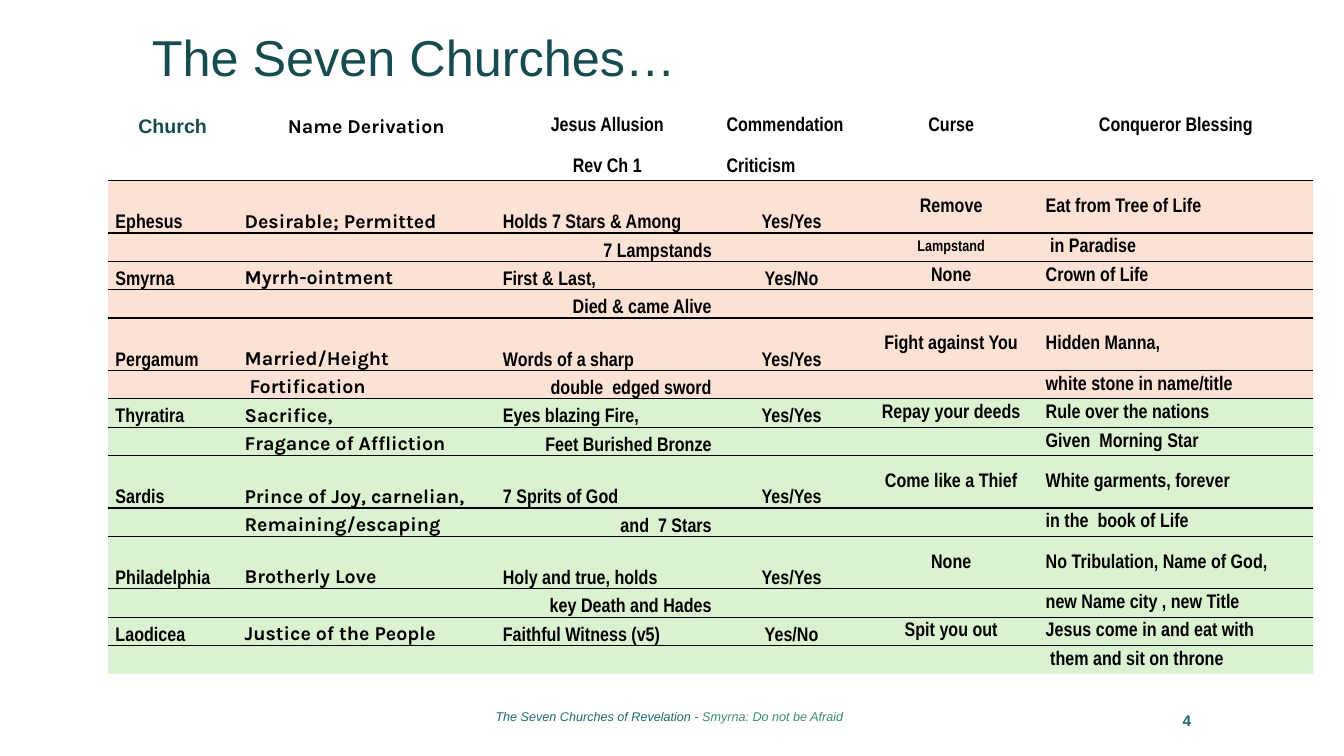
from dataclasses import dataclass
from typing import Any

import pptx
import pptx.dml.color
import pptx.enum.text
import pptx.oxml
import pptx.oxml.ns
import pptx.util

RGBColor = pptx.dml.color.RGBColor
ALIGN = pptx.enum.text.PP_ALIGN
ANCHOR = pptx.enum.text.MSO_ANCHOR

PX = 9525  # EMU per px, 96 px to the inch
TEAL_DARK = RGBColor(0x16, 0x4B, 0x4F)
TEAL = RGBColor(0x1F, 0x69, 0x6F)
GREEN = RGBColor(0x38, 0x90, 0x66)
BLACK = RGBColor(0, 0, 0)
PEACH = RGBColor(0xFB, 0xE2, 0xD5)
MINT = RGBColor(0xDA, 0xF2, 0xD0)

NO_STYLE = "{2D5ABB26-0587-4C30-8999-92F81FD0307C}"
TALL, SHORT = 50, 27


@dataclass
class Column:
    width: int
    font: str
    header: tuple[str, str]
    header_align: Any
    aligns: tuple[Any, Any]
    anchor: Any


@dataclass
class Church:
    first: tuple[str, ...]
    second: tuple[str, ...]
    fill: RGBColor
    height: int


NARROW, KARLA = "Arial Narrow", "Karla"
LEFT, CENTER, RIGHT = ALIGN.LEFT, ALIGN.CENTER, ALIGN.RIGHT
BOTTOM, MIDDLE = ANCHOR.BOTTOM, ANCHOR.MIDDLE

COLUMNS = [
    Column(123, NARROW, ("Church", ""), CENTER, (LEFT, LEFT), BOTTOM),
    Column(246, KARLA, ("Name Derivation", ""), CENTER, (LEFT, LEFT), BOTTOM),
    Column(213, NARROW, ("Jesus Allusion", "Rev Ch 1"), CENTER, (LEFT, RIGHT), BOTTOM),
    Column(138, NARROW, ("Commendation", "Criticism"), LEFT, (CENTER, CENTER), BOTTOM),
    Column(166, NARROW, ("Curse", ""), CENTER, (CENTER, CENTER), MIDDLE),
    Column(262, NARROW, ("Conqueror Blessing", ""), CENTER, (LEFT, LEFT), MIDDLE),
]

CHURCHES = [
    Church(("Ephesus", "Desirable; Permitted", "Holds 7 Stars & Among", "Yes/Yes",
            "Remove", "Eat from Tree of Life"),
           ("", "", "7 Lampstands", "", "Lampstand", " in Paradise"), PEACH, TALL),
    Church(("Smyrna", "Myrrh-ointment", "First & Last,", "Yes/No", "None", "Crown of Life"),
           ("", "", "Died & came Alive", "", "", ""), PEACH, SHORT),
    Church(("Pergamum", "Married/Height", "Words of a sharp", "Yes/Yes",
            "Fight against You", "Hidden Manna,"),
           ("", " Fortification", "double  edged sword", "", "",
            "white stone in name/title"), PEACH, TALL),
    Church(("Thyratira", "Sacrifice,", "Eyes blazing Fire,", "Yes/Yes",
            "Repay your deeds", "Rule over the nations"),
           ("", "Fragance of Affliction", "Feet Burished Bronze", "", "",
            "Given  Morning Star"), MINT, SHORT),
    Church(("Sardis", "Prince of Joy, carnelian,", "7 Sprits of God", "Yes/Yes",
            "Come like a Thief", "White garments, forever"),
           ("", "Remaining/escaping", "and  7 Stars", "", "",
            "in the  book of Life"), MINT, TALL),
    Church(("Philadelphia", "Brotherly Love", "Holy and true, holds", "Yes/Yes",
            "None", "No Tribulation, Name of God,"),
           ("", "", "key Death and Hades", "", "", "new Name city , new Title"), MINT, TALL),
    Church(("Laodicea", "Justice of the People", "Faithful Witness (v5)", "Yes/No",
            "Spit you out", "Jesus come in and eat with"),
           ("", "", "", "", "", " them and sit on throne"), MINT, SHORT),
]


def set_all(target: Any, values: dict[str, Any]) -> None:
    for name, value in values.items():
        setattr(target, name, value)


def add_run(p: Any, text: str, font: str, size: int, color: RGBColor, **style: bool) -> None:
    r = p.add_run()
    r.text = text
    set_all(r.font, {"name": font, "size": pptx.util.Pt(size), **style})
    r.font.color.rgb = color


def place(sp: Any, left: int, top: int, width: int, height: int) -> None:
    set_all(sp, {"left": left * PX, "top": top * PX,
                 "width": width * PX, "height": height * PX})


def add_box(s: Any, left: int, top: int, width: int, height: int, align: Any) -> Any:
    sp = s.shapes.add_textbox(0, 0, 0, 0)
    place(sp, left, top, width, height)
    set_all(sp.text_frame, {"word_wrap": True, "vertical_anchor": MIDDLE})
    p = sp.text_frame.paragraphs[0]
    p.alignment = align
    return p


def add_border(cell: Any, side: str) -> None:
    line = pptx.oxml.parse_xml(
        f'<a:{side} {pptx.oxml.ns.nsdecls("a")} w="12700"><a:solidFill>'
        f'<a:srgbClr val="{BLACK}"/></a:solidFill></a:{side}>')
    tc_pr = cell._tc.get_or_add_tcPr()
    borders = [e for e in tc_pr if e.tag.endswith(("lnT", "lnB"))]
    tc_pr.insert(len(borders), line)


def fill_cell(cell: Any, text: str, col: Column, align: Any, anchor: Any) -> None:
    set_all(cell, {"margin_left": 7 * PX, "margin_right": 7 * PX, "margin_top": 0,
                   "margin_bottom": 0, "vertical_anchor": anchor})
    p = cell.text_frame.paragraphs[0]
    set_all(p, {"alignment": align, "line_spacing": 1.07, "space_after": pptx.util.Pt(8)})
    if text == "Church":
        add_run(p, text, "Arial", 14, TEAL_DARK, bold=True)
    elif text:
        add_run(p, text, col.font, 11 if text == "Lampstand" else 14, BLACK, bold=True)
    else:
        p._p.get_or_add_endParaRPr().set("sz", "1400")


def add_church_table(s: Any) -> None:
    heights = [TALL, SHORT]
    for church in CHURCHES:
        heights += [church.height, SHORT]
    width = sum(col.width for col in COLUMNS)
    frame = s.shapes.add_table(len(heights), len(COLUMNS), 103 * PX, 95 * PX,
                               width * PX, sum(heights) * PX)
    table = frame.table
    set_all(table, {"first_row": False, "horz_banding": False})
    table._tbl.tblPr.find(pptx.oxml.ns.qn("a:tableStyleId")).text = NO_STYLE
    for row, height in zip(table.rows, heights):
        row.height = height * PX

    for c, col in enumerate(COLUMNS):
        table.columns[c].width = col.width * PX
        # Header
        for half in (0, 1):
            cell = table.cell(half, c)
            fill_cell(cell, col.header[half], col, col.header_align, MIDDLE)
            cell.fill.background()
        add_border(table.cell(1, c), "lnB")
        # Two rows to each church
        for i, church in enumerate(CHURCHES, start=1):
            for half, texts in enumerate((church.first, church.second)):
                cell = table.cell(2 * i + half, c)
                fill_cell(cell, texts[c], col, col.aligns[half], col.anchor)
                cell.fill.solid()
                cell.fill.fore_color.rgb = church.fill
            add_border(table.cell(2 * i, c), "lnT")
            if i < len(CHURCHES):
                add_border(table.cell(2 * i + 1, c), "lnB")


def main() -> None:
    prs = pptx.Presentation()
    set_all(prs, {"slide_width": 1280 * PX, "slide_height": 720 * PX})
    s = prs.slides.add_slide(prs.slide_layouts[5])

    # Title
    title = s.shapes.title
    place(title, 135, 18, 1008, 70)
    set_all(title.text_frame, {"word_wrap": True, "vertical_anchor": BOTTOM,
                               "auto_size": pptx.enum.text.MSO_AUTO_SIZE.NONE})
    p = title.text_frame.paragraphs[0]
    set_all(p, {"alignment": LEFT, "line_spacing": 0.9})
    add_run(p, "The Seven Churches…", "Arial", 36, TEAL_DARK)

    add_church_table(s)

    # Footer and slide number
    p = add_box(s, 408, 661, 459, 45, CENTER)
    set_all(p, {"line_spacing": 0.9, "space_after": pptx.util.Pt(6)})
    add_run(p, "The Seven Churches of Revelation - ", "Arial", 9, TEAL, italic=True)
    add_run(p, "Smyrna: Do not be Afraid", "Arial", 9, GREEN, italic=True)
    p = add_box(s, 845, 667, 299, 38, RIGHT)
    p.space_after = pptx.util.Pt(6)
    add_run(p, "4", "Arial", 11, TEAL, bold=True)

    prs.save("out.pptx")


if __name__ == "__main__":
    main()
